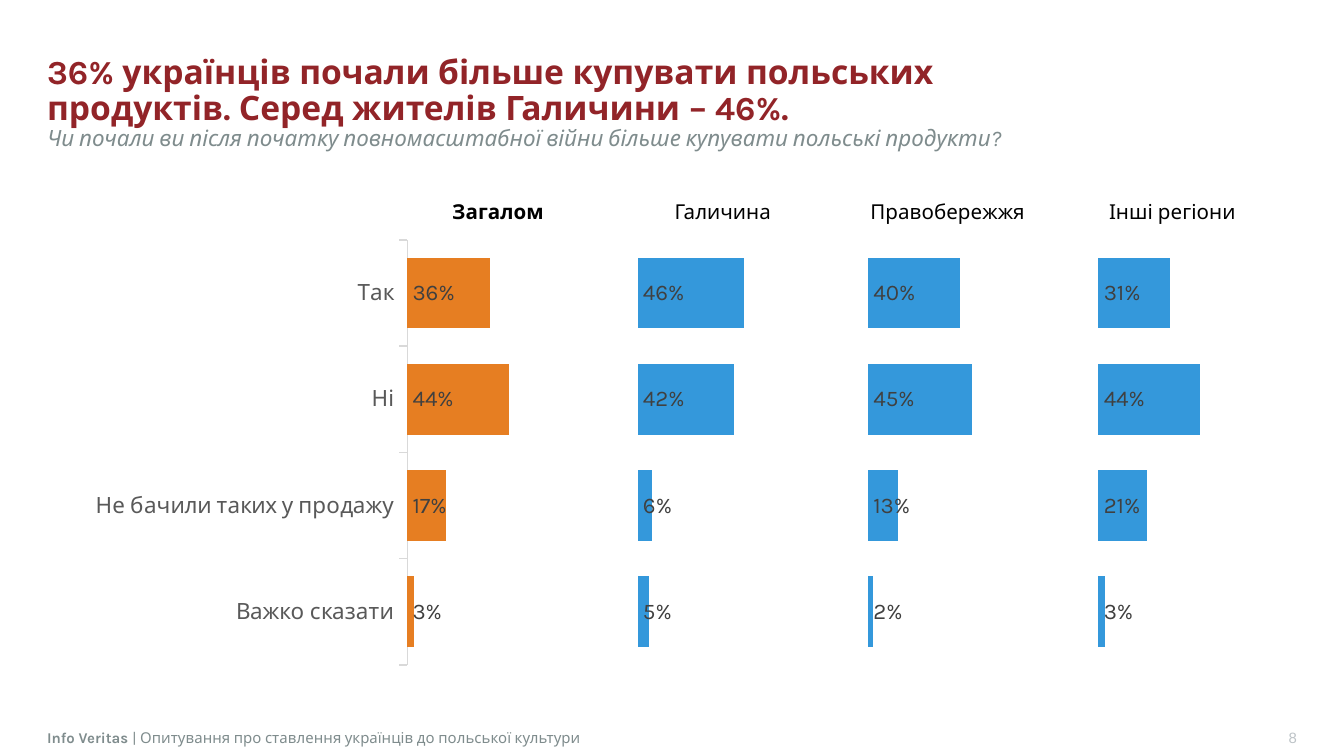
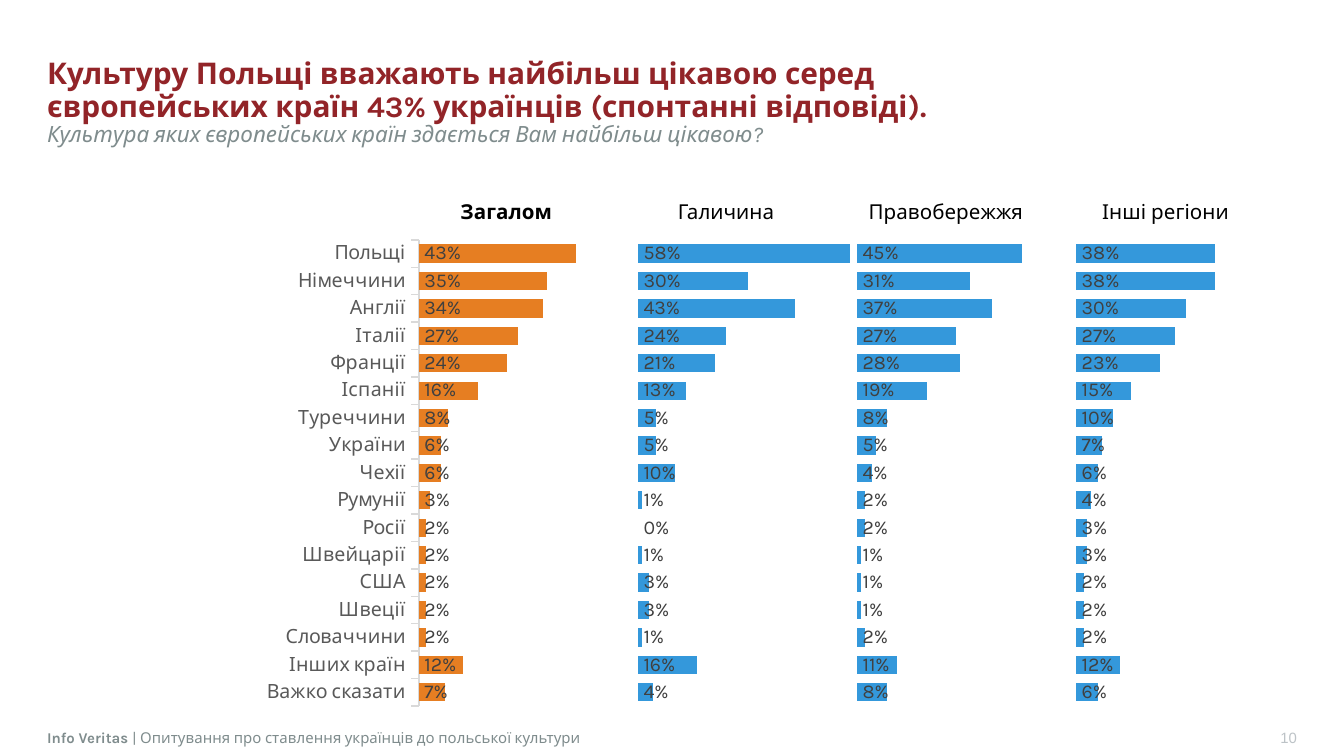
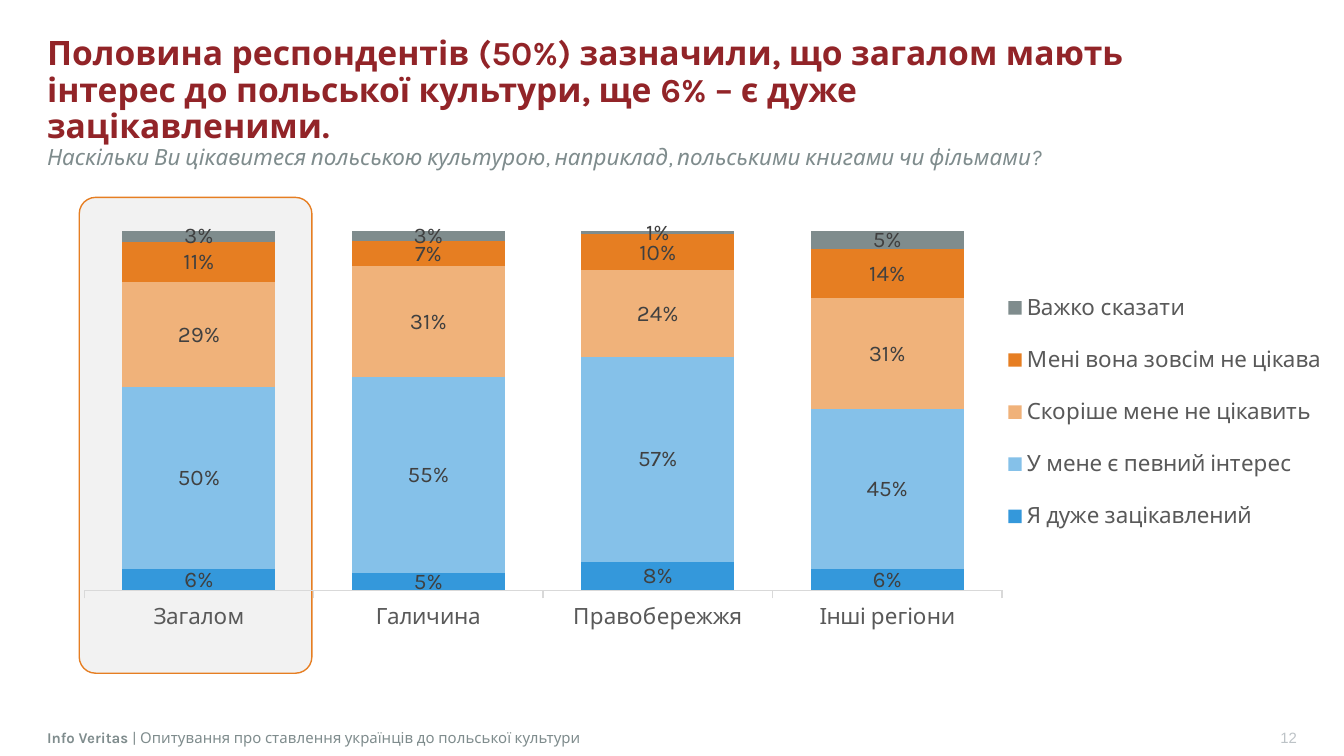
"""Build three survey slides comparing the answers of Ukrainian regions."""
import copy
import dataclasses

import pptx
import pptx.chart.data
import pptx.dml.color
import pptx.enum.chart
import pptx.enum.shapes
import pptx.enum.text
import pptx.oxml
import pptx.oxml.ns
import pptx.util

Pt = pptx.util.Pt
qn = pptx.oxml.ns.qn
Kind = pptx.enum.chart.XL_CHART_TYPE
Spot = pptx.enum.chart.XL_LABEL_POSITION
Align = pptx.enum.text.PP_ALIGN
Box = tuple[float, float, float, float]

HUES = {
    "title": "922428", "grey": "7F8C8D", "page": "BDC3C7", "black": "000000",
    "axis": "595959", "line": "D9D9D9", "label": "404040", "panel": "F2F2F2",
    "white": "FFFFFF", "orange": "E67E22", "blue": "3498DB",
    "peach": "F0B27A", "sky": "85C1E9",
}
FONT = "Karla"
LEFT = 25.2
PLAIN = "{2D5ABB26-0587-4C30-8999-92F81FD0307C}"
AREAS = ["Загалом", "Галичина", "Правобережжя", "Інші регіони"]


@dataclasses.dataclass
class Head:
    title: str
    ask: str
    page: int
    width: float
    size: float = 18


@dataclasses.dataclass
class Series:
    name: str
    vals: list[float]
    hue: str | None


@dataclasses.dataclass
class Graph:
    kind: Kind
    box: Box
    plot: Box
    cats: list[str]
    rows: list[Series]
    spot: Spot
    size: float = 12


def color(name: str) -> pptx.dml.color.RGBColor:
    return pptx.dml.color.RGBColor.from_string(HUES[name])


def style(font, size: float, hue: str, bold=False, slant=False, face=FONT) -> None:
    font.name, font.size = face, Pt(size)
    font.bold, font.italic = bold, slant
    font.color.rgb = color(hue)


def place(box: Box) -> list[pptx.util.Length]:
    return [Pt(side) for side in box]


def clear(frame) -> None:
    frame.margin_left = frame.margin_right = 0
    frame.margin_top = frame.margin_bottom = 0
    frame.word_wrap = True
    frame.auto_size = pptx.enum.text.MSO_AUTO_SIZE.NONE
    frame.vertical_anchor = pptx.enum.text.MSO_ANCHOR.MIDDLE


def add_band(slide, left: float, width: float, text: str, align: Align):
    band = slide.shapes.add_shape(
        pptx.enum.shapes.MSO_SHAPE.RECTANGLE, *place((left, 389.5, width, 11.5)))
    band.shadow.inherit = False
    band.fill.solid()
    band.fill.fore_color.rgb = color("white")
    band.line.fill.background()
    clear(band.text_frame)
    band.text_frame.text = text
    par = band.text_frame.paragraphs[0]
    par.alignment = align
    return par


def add_slide(deck, head: Head):
    slide = deck.slides.add_slide(deck.slide_layouts[5])
    par = add_band(slide, 592.6, 102.2, str(head.page), Align.RIGHT)
    style(par.runs[0].font, 8, "page", face="Arial")
    par = add_band(slide, LEFT, 555.8, "Info Veritas ", Align.LEFT)
    par.add_run().text = "| Опитування про ставлення українців до польської культури"
    for run, bold in zip(par.runs, (True, False)):
        style(run.font, 8, "grey", bold)

    title = slide.shapes.title
    title.left, title.top, title.width, title.height = place((LEFT, 43.9, head.width, 23))
    clear(title.text_frame)
    par = title.text_frame.paragraphs[0]
    par.text = f"{head.title}\n{head.ask}"
    par.alignment, par.line_spacing = Align.LEFT, 0.9
    main, ask = par.runs
    style(main.font, head.size, "title", bold=True)
    style(ask.font, 12, "grey", slant=True)
    par._p.find(qn("a:br")).append(copy.deepcopy(main._r.rPr))
    return slide


def set_frame(part, index: int, box: Box, inner: bool) -> None:
    for old in part.findall(qn("c:layout")):
        part.remove(old)
    target = '<c:layoutTarget val="inner"/>' if inner else ""
    modes = "".join(f'<c:{key}Mode val="edge"/>' for key in "xy")
    sides = "".join(f'<c:{key} val="{val}"/>' for key, val in zip("xywh", box))
    part.insert(index, pptx.oxml.parse_xml(
        f'<c:layout {pptx.oxml.ns.nsdecls("c")}><c:manualLayout>'
        f"{target}{modes}{sides}</c:manualLayout></c:layout>"))


def add_graph(slide, graph: Graph):
    data = pptx.chart.data.CategoryChartData(number_format="0%")
    data.categories = graph.cats
    for row in graph.rows:
        data.add_series(row.name, row.vals)
    chart = slide.shapes.add_chart(graph.kind, *place(graph.box), data).chart
    chart.has_title = chart.has_legend = False
    style(chart.font, 12, "black")
    set_frame(chart._chartSpace.chart.plotArea, 0, graph.plot, True)

    plot = chart.plots[0]
    plot.gap_width, plot.overlap = 50, 100
    plot.vary_by_categories = False
    for series, row in zip(plot.series, graph.rows):
        if row.hue is None:
            series.format.fill.background()
            continue
        series.format.fill.solid()
        series.format.fill.fore_color.rgb = color(row.hue)
        labels = series.data_labels
        labels.show_value = True
        labels.number_format, labels.number_format_is_linked = "0%", False
        labels.position = graph.spot
        style(labels.font, graph.size, "label")

    axis = chart.category_axis
    axis.reverse_order = graph.kind == Kind.BAR_STACKED_100
    axis.has_major_gridlines = False
    axis.major_tick_mark = pptx.enum.chart.XL_TICK_MARK.OUTSIDE
    axis.format.line.color.rgb = color("line")
    axis.format.line.width = Pt(0.75)
    style(axis.tick_labels.font, graph.size, "axis")
    scale = chart.value_axis
    scale.has_major_gridlines = scale.visible = False
    scale.minimum_scale, scale.maximum_scale = 0, 1
    return chart


def add_legend(chart, box: Box) -> None:
    chart.has_legend = True
    key = chart.legend
    key.position = pptx.enum.chart.XL_LEGEND_POSITION.RIGHT
    key.include_in_layout = False
    style(key.font, 12, "axis")
    set_frame(key._element, 1, box, False)


def add_names(slide, left: float, width: float) -> None:
    table = slide.shapes.add_table(
        1, len(AREAS), *place((left, 99.4, width, 29.5))).table
    table.first_row = table.horz_banding = False
    table._tbl.tblPr.find(qn("a:tableStyleId")).text = PLAIN
    for num, name in enumerate(AREAS):
        cell = table.cell(0, num)
        cell.fill.background()
        cell.margin_left = cell.margin_right = Pt(3.6)
        cell.margin_top = cell.margin_bottom = Pt(3.6)
        cell.vertical_anchor = pptx.enum.text.MSO_ANCHOR.MIDDLE
        cell.text_frame.text = name
        par = cell.text_frame.paragraphs[0]
        par.alignment = Align.CENTER
        style(par.runs[0].font, 11, "black", bold=num == 0)


def add_panel(slide) -> None:
    panel = slide.shapes.add_shape(
        pptx.enum.shapes.MSO_SHAPE.ROUNDED_RECTANGLE, *place((42.5, 105.8, 124.6, 254.9)))
    panel.adjustments[0] = 0.07
    panel.shadow.inherit = False
    panel.fill.solid()
    panel.fill.fore_color.rgb = color("panel")
    panel.line.color.rgb = color("orange")
    panel.line.width = Pt(0.75)


def shares(nums: list[int]) -> list[float]:
    return [num / 100 for num in nums]


def pad_rows(cols: list[list[int]], whole: int) -> list[Series]:
    rows = []
    for num, col in enumerate(cols):
        hue = "blue" if num else "orange"
        rest = [whole - val for val in col]
        rows.append(Series(f"Series {2 * num + 1}", shares(col), hue))
        rows.append(Series(f"Series {2 * num + 2}", shares(rest), None))
    return rows


def add_goods(deck) -> None:
    slide = add_slide(deck, Head(
        "36% українців почали більше купувати польських продуктів. "
        "Серед жителів Галичини – 46%.",
        "Чи почали ви після початку повномасштабної війни більше купувати польські продукти?",
        8, 555.8))
    cols = [[36, 44, 17, 3], [46, 42, 6, 5], [40, 45, 13, 2], [31, 44, 21, 3]]
    add_graph(slide, Graph(
        Kind.BAR_STACKED_100, (8.6, 95, 703.4, 289.4), (0.298, 0.116, 0.702, 0.787),
        ["Так", "Ні", "Не бачили таких у продажу", "Важко сказати"],
        pad_rows(cols, 100), Spot.INSIDE_BASE))
    add_names(slide, 206.6, 481.7)


def add_lands(deck) -> None:
    slide = add_slide(deck, Head(
        "Культуру Польщі вважають найбільш цікавою серед європейських країн "
        "43% українців (спонтанні відповіді).",
        "Культура яких європейських країн здається Вам найбільш цікавою?",
        10, 544.3, 16))
    lands = [
        "Польщі", "Німеччини", "Англії", "Італії", "Франції", "Іспанії",
        "Туреччини", "України", "Чехії", "Румунії", "Росії", "Швейцарії",
        "США", "Швеції", "Словаччини", "Інших країн", "Важко сказати",
    ]
    cols = [
        [43, 35, 34, 27, 24, 16, 8, 6, 6, 3, 2, 2, 2, 2, 2, 12, 7],
        [58, 30, 43, 24, 21, 13, 5, 5, 10, 1, 0, 1, 3, 3, 1, 16, 4],
        [45, 31, 37, 27, 28, 19, 8, 5, 4, 2, 2, 1, 1, 1, 2, 11, 8],
        [38, 38, 30, 27, 23, 15, 10, 7, 6, 4, 3, 3, 2, 2, 2, 12, 6],
    ]
    add_graph(slide, Graph(
        Kind.BAR_STACKED_100, (LEFT, 95, 668.9, 289.4), (0.298, 0.116, 0.702, 0.863),
        lands, pad_rows(cols, 60), Spot.INSIDE_BASE, 10.5))
    add_names(slide, 212.4, 470.9)


def add_tastes(deck) -> None:
    slide = add_slide(deck, Head(
        "Половина респондентів (50%) зазначили, що загалом мають інтерес "
        "до польської культури, ще 6% – є дуже зацікавленими.",
        "Наскільки Ви цікавитеся польською культурою, наприклад, "
        "польськими книгами чи фільмами?",
        12, 583.9))
    add_panel(slide)
    rows = [
        Series("Я дуже зацікавлений", shares([6, 5, 8, 6]), "blue"),
        Series("У мене є певний інтерес", shares([50, 55, 57, 45]), "sky"),
        Series("Скоріше мене не цікавить", shares([29, 31, 24, 31]), "peach"),
        Series("Мені вона зовсім не цікава", shares([11, 7, 10, 14]), "orange"),
        Series("Важко сказати", shares([3, 3, 1, 5]), "grey"),
    ]
    chart = add_graph(slide, Graph(
        Kind.COLUMN_STACKED_100, (8.6, 95, 703.4, 289.4), (0.052, 0.099, 0.699, 0.666),
        AREAS, rows, Spot.CENTER))
    add_legend(chart, (0.75, 0.17, 0.25, 0.53))


def main() -> None:
    deck = pptx.Presentation()
    deck.slide_width, deck.slide_height = Pt(720), Pt(405)
    for build in (add_goods, add_lands, add_tastes):
        build(deck)
    deck.save("out.pptx")


if __name__ == "__main__":
    main()
